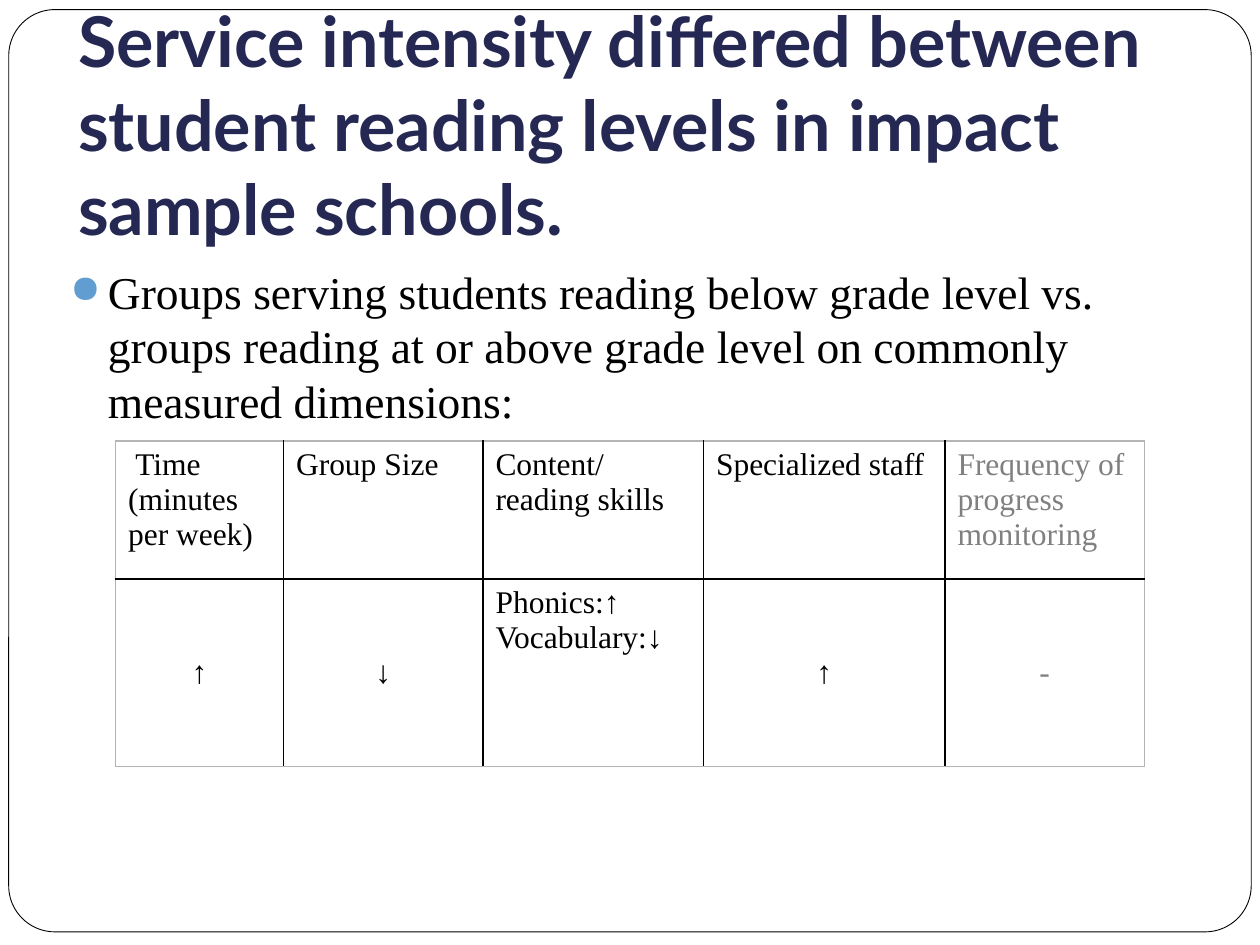
from dataclasses import dataclass

from lxml import etree
from pptx import Presentation
from pptx.dml.color import RGBColor
from pptx.enum import shapes, text
from pptx.oxml.ns import qn
from pptx.util import Pt


@dataclass(frozen=True)
class Theme:
    heading_font: str = "Lato"
    body_font: str = "Times New Roman"
    title_size: int = 40
    body_size: int = 26
    table_size: int = 18
    navy: str = "242852"
    ink: str = "000000"
    muted: str = "808080"
    bullet: str = "629DD1"
    edge: str = "B4B4B4"
    paper: str = "FFFFFF"


THEME = Theme()
COLUMN_WIDTHS = (96, 114, 126, 138, 114)
ROW_HEIGHTS = (79, 107)
DIMENSIONS = (
    (" Time (minutes per week)", ["↑"], THEME.ink),
    ("Group Size", ["↓"], THEME.ink),
    ("Content/ reading skills", ["Phonics:↑", "Vocabulary:↓"], THEME.ink),
    ("Specialized staff", ["↑"], THEME.ink),
    ("Frequency of progress monitoring", ["-"], THEME.muted),
)


def add_span(para, words, font, size, color, bold=False):
    span = para.add_run()
    span.text = words
    span.font.name = font
    span.font.size = Pt(size)
    span.font.bold = bold
    span.font.color.rgb = RGBColor.from_string(color)


def place(shape, box):
    shape.left, shape.top, shape.width, shape.height = map(Pt, box)


def add_frame(page, box):
    frame = page.shapes.add_shape(
        shapes.MSO_SHAPE.ROUNDED_RECTANGLE, *map(Pt, box))
    frame.adjustments[0] = 0.05
    frame.shadow.inherit = False
    frame.fill.solid()
    frame.fill.fore_color.rgb = RGBColor.from_string(THEME.paper)
    frame.line.color.rgb = RGBColor.from_string(THEME.ink)
    frame.line.width = Pt(0.5)


def set_title(page, box, words):
    title = page.shapes.title
    place(title, box)
    page.shapes._spTree.append(title._element)
    body = title.text_frame
    body.auto_size = text.MSO_AUTO_SIZE.NONE
    body.word_wrap = True
    body.vertical_anchor = text.MSO_ANCHOR.BOTTOM
    body.margin_left = body.margin_right = body.margin_bottom = Pt(7.2)
    body.margin_top = Pt(3.6)
    para = body.paragraphs[0]
    para.alignment = text.PP_ALIGN.LEFT
    para.line_spacing = 1.0
    add_span(para, words, THEME.heading_font, THEME.title_size, THEME.navy, True)


def add_bullet(para, indent):
    props = para._p.get_or_add_pPr()
    props.set("marL", str(Pt(indent)))
    props.set("indent", str(-Pt(indent)))
    color = etree.SubElement(props, qn("a:buClr"))
    etree.SubElement(color, qn("a:srgbClr"), val=THEME.bullet)
    etree.SubElement(props, qn("a:buSzPct"), val="85000")
    etree.SubElement(props, qn("a:buChar"), char="●")


def add_body(page, box, words):
    body = page.shapes.add_textbox(*map(Pt, box)).text_frame
    body.word_wrap = True
    para = body.paragraphs[0]
    para.space_before = Pt(5.8)
    para.line_spacing = Pt(31)
    add_bullet(para, 21.6)
    add_span(para, words, THEME.body_font, THEME.body_size, THEME.ink)


def set_borders(cell, colors):
    props = cell._tc.get_or_add_tcPr()
    for index, (side, color) in enumerate(zip("LRTB", colors)):
        line = etree.Element(qn(f"a:ln{side}"), w=str(Pt(1)))
        fill = etree.SubElement(line, qn("a:solidFill"))
        etree.SubElement(fill, qn("a:srgbClr"), val=color)
        props.insert(index, line)


def fill_cell(cell, lines, color, centered):
    cell.fill.background()
    if centered:
        cell.vertical_anchor = text.MSO_ANCHOR.MIDDLE
    for number, words in enumerate(lines):
        body = cell.text_frame
        para = body.add_paragraph() if number else body.paragraphs[0]
        if centered:
            para.alignment = text.PP_ALIGN.CENTER
        add_span(para, words, THEME.body_font, THEME.table_size, color)


def add_dimension_table(page, left, top):
    box = (left, top, sum(COLUMN_WIDTHS), sum(ROW_HEIGHTS))
    table = page.shapes.add_table(
        len(ROW_HEIGHTS), len(DIMENSIONS), *map(Pt, box)).table
    table.first_row = table.horz_banding = False
    for row, height in zip(table.rows, ROW_HEIGHTS):
        row.height = Pt(height)
    last_column, last_row = len(DIMENSIONS) - 1, len(ROW_HEIGHTS) - 1
    for column, (heading, results, color) in enumerate(DIMENSIONS):
        table.columns[column].width = Pt(COLUMN_WIDTHS[column])
        for row, lines in enumerate(([heading], results)):
            cell = table.cell(row, column)
            fill_cell(cell, lines, color, row > 0 and len(lines) == 1)
            outer = (column == 0, column == last_column, row == 0, row == last_row)
            set_borders(cell, [THEME.edge if side else THEME.ink for side in outer])


def build_page(deck):
    page = deck.slides.add_slide(deck.slide_layouts[5])
    add_frame(page, (5, 5.5, 710, 527))
    set_title(page, (37.4, 59.8, 648, 90),
              "Service intensity differed between student reading levels "
              "in impact sample schools.")
    add_body(page, (33, 147.6, 620.6, 174),
             "Groups serving students reading below grade level vs. groups "
             "reading at or above grade level on commonly measured dimensions:")
    add_dimension_table(page, 66, 252)


def main():
    deck = Presentation()
    deck.slide_width, deck.slide_height = Pt(720), Pt(540)
    build_page(deck)
    deck.save("out.pptx")


if __name__ == "__main__":
    main()
